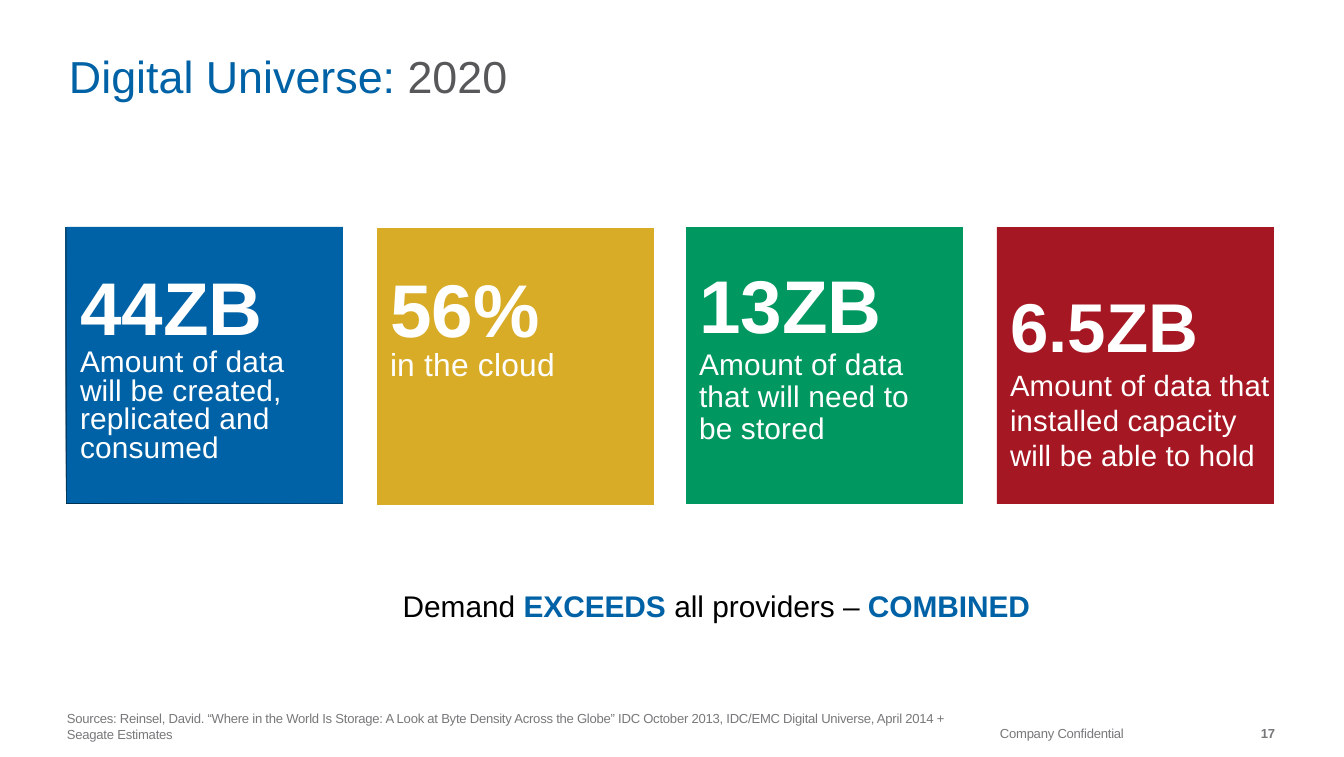
from dataclasses import dataclass
from typing import Any

from pptx import Presentation
from pptx.dml.color import RGBColor
from pptx.enum.shapes import MSO_SHAPE
from pptx.enum.text import MSO_ANCHOR, MSO_AUTO_SIZE, PP_ALIGN
from pptx.oxml import parse_xml
from pptx.oxml.ns import nsdecls
from pptx.util import Pt

SCALE = 914400 / 134.4
BLUE, NAVY, GOLD = "0062A6", "003153", "D9AC28"
GREEN, RED, WHITE = "009860", "A51722", "FFFFFF"
BLACK, SLATE, GRAY = "000000", "58575A", "78777A"
SIDE = 277


def px(n):
    return round(n * SCALE)


def color(code):
    return RGBColor.from_string(code)


@dataclass
class Deck:
    slide: Any
    face: str = "Arial"

    def run(self, para, text, size, code, bold=False, track=0):
        """Add one run; track is letter spacing in hundredths of a point."""
        run = para.add_run()
        run.text = text
        font = run.font
        font.name, font.size, font.bold = self.face, Pt(size), bold
        font.color.rgb = color(code)
        if track:
            run._r.get_or_add_rPr().set("spc", str(track))

    def frame(self, shape, area, pad=(0, 0, 0, 0), anchor=MSO_ANCHOR.TOP):
        """Place a text shape and return its first paragraph."""
        shape.left, shape.top, shape.width, shape.height = map(px, area)
        text = shape.text_frame
        text.auto_size = MSO_AUTO_SIZE.NONE
        text.word_wrap = True
        text.vertical_anchor = anchor
        (text.margin_left, text.margin_top,
         text.margin_right, text.margin_bottom) = map(px, pad)
        return text.paragraphs[0]

    def label(self, area, home=None, **style):
        home = home or self.slide.shapes
        return self.frame(home.add_textbox(0, 0, 0, 0), area, **style)

    def title(self, area):
        para = self.frame(self.slide.shapes.title, area, anchor=MSO_ANCHOR.BOTTOM)
        para.alignment = PP_ALIGN.LEFT
        return para

    def source(self, area, text):
        para = self.frame(self.slide.placeholders[1], area, anchor=MSO_ANCHOR.BOTTOM)
        props = para._p.get_or_add_pPr()
        props.set("marL", "0")
        props.set("indent", "0")
        props.append(parse_xml(f"<a:buNone {nsdecls('a')}/>"))
        para.space_before = Pt(0)
        self.run(para, text, 7, GRAY, track=-10)

    def tile(self, home, left, top, side):
        box = home.add_shape(MSO_SHAPE.RECTANGLE, *map(px, (left, top, side, side)))
        box.shadow.inherit = False
        box.line.fill.background()
        return box.fill

    def card(self, left, top, fill, head, lines, drop, sizes, space, edge=None):
        """Draw a square with a big figure; drop is the top of its text."""
        home = self.slide.shapes.add_group_shape().shapes
        side = SIDE
        if edge:
            rim = self.tile(home, left, top, side)
            rim.gradient()
            rim.gradient_angle = 45
            for stop, code in zip(rim.gradient_stops, (edge, fill)):
                stop.color.rgb = color(code)
            left, side = left + 1, side - 1
        face = self.tile(home, left, top, side)
        face.solid()
        face.fore_color.rgb = color(fill)

        para = self.label((left, drop, SIDE, 191), home, pad=(13, 0, 0, 0))
        para.line_spacing = space
        self.run(para, head, sizes[0], WHITE, True, 10)
        for line in lines:
            para.add_line_break()
            self.run(para, line, sizes[1], WHITE, track=10)


def main():
    show = Presentation()
    show.slide_width, show.slide_height = px(1344), px(757)
    deck = Deck(show.slides.add_slide(show.slide_layouts[1]))

    para = deck.title((69, 48, 1207, 54))
    deck.run(para, "Digital Universe: ", 24, BLUE)
    deck.run(para, "2020", 24, SLATE)

    deck.card(66, 227, BLUE, "44ZB",
              ["Amount of data ", "will be created, replicated and consumed"],
              278, (40, 16), 0.8, NAVY)
    deck.card(377, 228, GOLD, "56%", ["in the cloud"], 280, (40, 17), 0.8)
    deck.card(686, 227, GREEN, "13ZB",
              ["Amount of data ", "that will need to ", "be stored"],
              269, (40, 16), 0.9)
    deck.card(997, 227, RED, "6.5ZB",
              ["Amount of data that installed capacity will be able to hold"],
              284, (37, 15.7), 1.0)

    para = deck.label((103, 571, 1173, 69), pad=(67, 7, 13, 7),
                      anchor=MSO_ANCHOR.MIDDLE)
    para.alignment = PP_ALIGN.CENTER
    for text, code, bold in (("Demand ", BLACK, False), ("EXCEEDS ", BLUE, True),
                             ("all providers – ", BLACK, False),
                             ("COMBINED", BLUE, True)):
        deck.run(para, text, 16, code, bold)

    deck.source((67, 726, 899, 16),
                "Sources: Reinsel, David. “Where in the World Is Storage: A Look at "
                "Byte Density Across the Globe” IDC October 2013, IDC/EMC Digital "
                "Universe, April 2014 + Seagate Estimates")
    para = deck.label((1000, 725, 142, 16))
    deck.run(para, "Company Confidential", 7, GRAY, track=-10)
    para = deck.label((1134, 725, 141, 16))
    para.alignment = PP_ALIGN.RIGHT
    deck.run(para, "17", 7, GRAY, True, -10)

    show.save("out.pptx")


if __name__ == "__main__":
    main()
